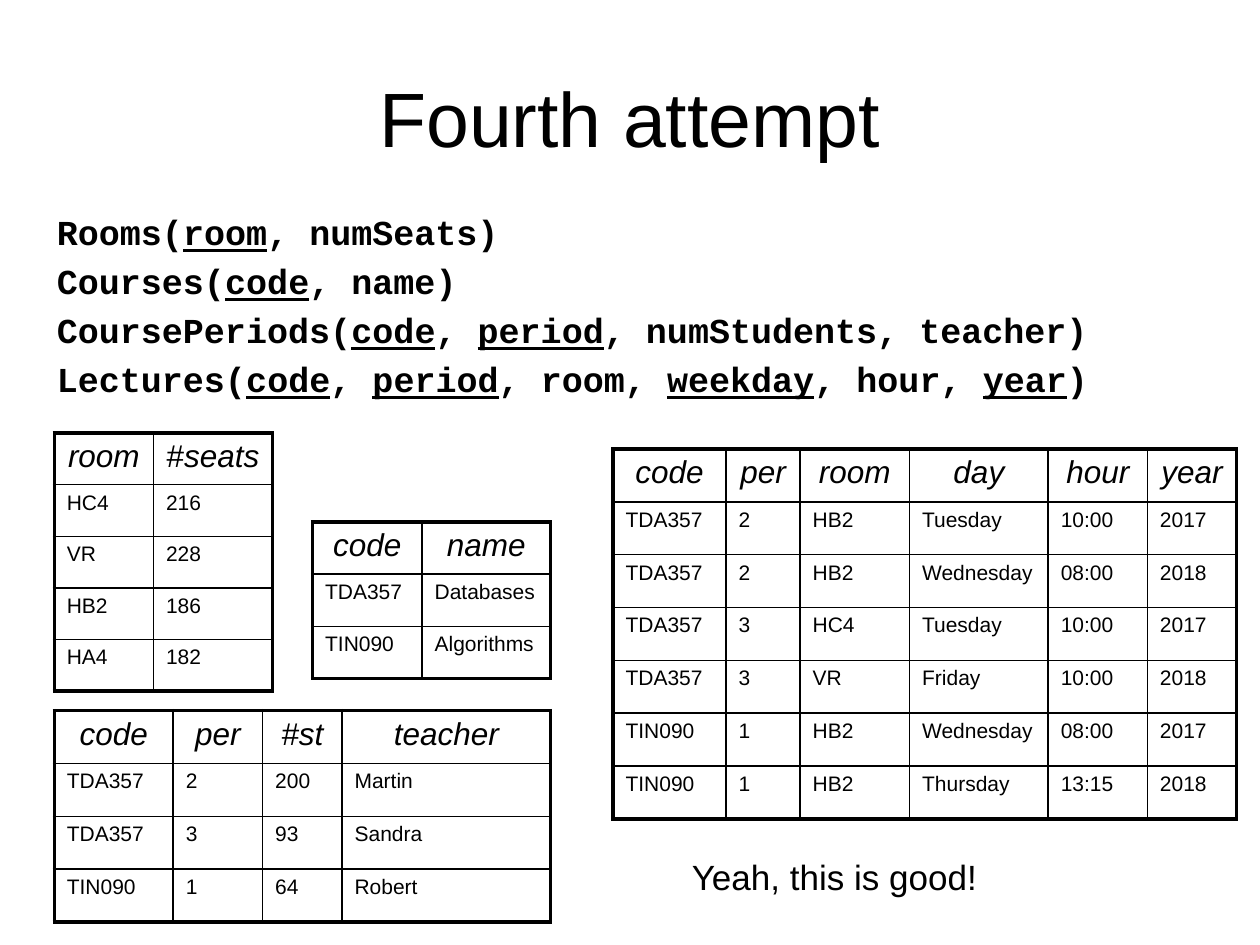
from dataclasses import dataclass

from lxml import etree
from pptx import Presentation
from pptx.dml.color import RGBColor
from pptx.enum.text import MSO_ANCHOR, PP_ALIGN
from pptx.oxml.ns import qn
from pptx.util import Pt

BLACK = RGBColor(0, 0, 0)
CENTER, LEFT = PP_ALIGN.CENTER, PP_ALIGN.LEFT
TOP, MIDDLE = MSO_ANCHOR.TOP, MSO_ANCHOR.MIDDLE
SANS, MONO = "Arial", "Courier New"
THICK, THIN = Pt(2.25), Pt(1)


@dataclass
class Grid:
    left: float
    top: float
    high: float
    wide: list[float]
    rows: list[str]


# Underscores enclose the key columns.
SCHEMA = [
    "Rooms(_room_, numSeats)",
    "Courses(_code_, name)",
    "CoursePeriods(_code_, _period_, numStudents, teacher)",
    "Lectures(_code_, _period_, room, _weekday_, hour, _year_)",
]

# In a heading, the part before a bar is upright.
GRIDS = [
    Grid(31, 247.5, 29.5, [56.7, 68.1],
         ["room #|seats", "HC4 216", "VR 228", "HB2 186", "HA4 182"]),
    Grid(178.6, 298.3, 29.8, [62.6, 73.4],
         ["code name", "TDA357 Databases", "TIN090 Algorithms"]),
    Grid(31, 406.1, 30.2, [68, 51.1, 45.4, 119.2],
         ["code per #st teacher", "TDA357 2 200 Martin",
          "TDA357 3 93 Sandra", "TIN090 1 64 Robert"]),
    Grid(350.3, 256.6, 30.2, [64.6, 42.3, 62.6, 79.2, 56.7, 50.9],
         ["code per room day hour year",
          "TDA357 2 HB2 Tuesday 10:00 2017",
          "TDA357 2 HB2 Wednesday 08:00 2018",
          "TDA357 3 HC4 Tuesday 10:00 2017",
          "TDA357 3 VR Friday 10:00 2018",
          "TIN090 1 HB2 Wednesday 08:00 2017",
          "TIN090 1 HB2 Thursday 13:15 2018"]),
]


def style(para, size: float, face: str = SANS, align=LEFT) -> None:
    para.alignment = align
    font = para.font
    font.size, font.name = Pt(size), face
    font.color.rgb = BLACK


def add_box(slide, left: float, top: float, width: float, height: float,
            anchor=TOP):
    box = slide.shapes.add_textbox(Pt(left), Pt(top), Pt(width), Pt(height))
    frame = box.text_frame
    frame.word_wrap = True
    frame.vertical_anchor = anchor
    return frame


def add_schema(slide) -> None:
    frame = add_box(slide, 25.4, 116.6, 658.8, 155.5)
    for row, line in enumerate(SCHEMA):
        para = frame.add_paragraph() if row else frame.paragraphs[0]
        style(para, 20, MONO)
        para.font.bold = True
        para.space_before = Pt(4)
        for pos, part in enumerate(line.split("_")):
            run = para.add_run()
            run.text = part
            if pos % 2:
                run.font.underline = True


def add_edge(cell, side: str, width: int) -> None:
    props = cell._tc.get_or_add_tcPr()
    line = etree.SubElement(props, qn(f"a:ln{side}"), w=str(width))
    fill = etree.SubElement(line, qn("a:solidFill"))
    etree.SubElement(fill, qn("a:srgbClr"), val=str(BLACK))


def fill_cell(cell, text: str, head: bool) -> None:
    para = cell.text_frame.paragraphs[0]
    style(para, 18 if head else 12, align=CENTER if head else LEFT)
    para.font.italic = head
    plain, _, main = text.rpartition("|")
    if plain:
        run = para.add_run()
        run.text = plain
        run.font.italic = False
    para.add_run().text = main


def add_grid(slide, grid: Grid) -> None:
    """Draw a table with a thick frame and thin inner lines."""
    tall, broad = len(grid.rows), len(grid.wide)
    table = slide.shapes.add_table(
        tall, broad, Pt(grid.left), Pt(grid.top),
        Pt(sum(grid.wide)), Pt(tall * grid.high)).table
    table.first_row = table.horz_banding = False
    for col, width in zip(table.columns, grid.wide):
        col.width = Pt(width)
    for row, line in enumerate(grid.rows):
        table.rows[row].height = Pt(grid.high)
        for col, text in enumerate(line.split()):
            cell = table.cell(row, col)
            fill_cell(cell, text, row == 0)
            outer = {"L": col == 0, "R": col == broad - 1,
                     "T": row == 0, "B": row == tall - 1}
            for side, edge in outer.items():
                add_edge(cell, side, THICK if edge else THIN)
            cell.fill.background()


def add_line(slide, text: str, place: tuple, size: float, align=LEFT,
             anchor=TOP) -> None:
    para = add_box(slide, *place, anchor).paragraphs[0]
    para.text = text
    style(para, size, align=align)


def main() -> None:
    deck = Presentation()
    deck.slide_width, deck.slide_height = Pt(720), Pt(540)
    slide = deck.slides.add_slide(deck.slide_layouts[6])
    add_line(slide, "Fourth attempt", (36, 21.6, 648, 90), 44, CENTER, MIDDLE)
    add_schema(slide)
    for grid in GRIDS:
        add_grid(slide, grid)
    add_line(slide, "Yeah, this is good!", (388.3, 485.3, 295.2, 31), 20)
    deck.save("out.pptx")


if __name__ == "__main__":
    main()
